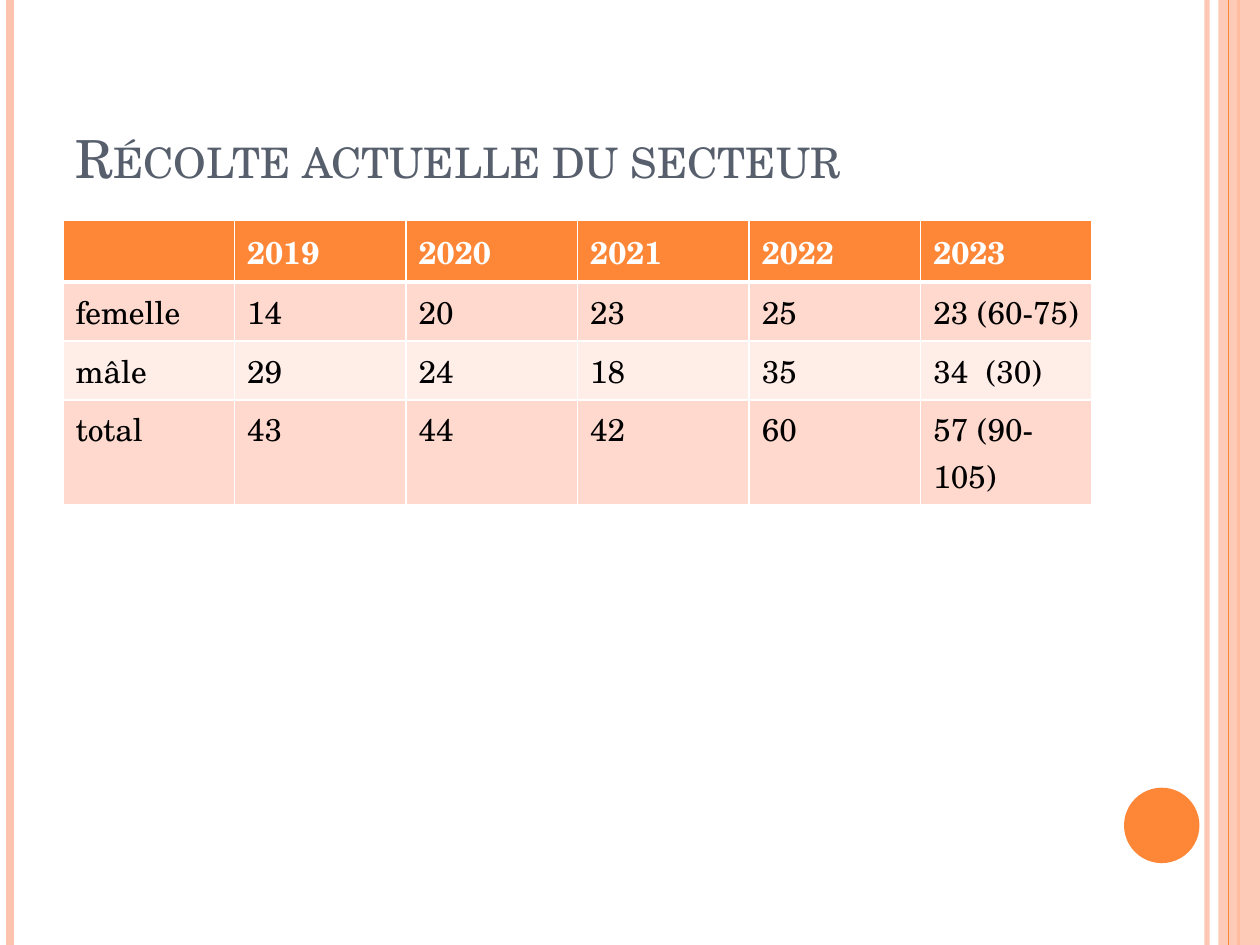
"""Build the slide on the sector's current harvest by sex and year."""
from lxml import etree
from pptx import Presentation
from pptx import util as u
from pptx.dml.color import RGBColor
from pptx.enum import shapes, text
from pptx.oxml.ns import qn

ORANGE = RGBColor(0xFE, 0x86, 0x37)
PEACH = RGBColor(0xFE, 0xC3, 0xAE)
BAND_DARK = RGBColor(0xFF, 0xD9, 0xCE)
BAND_LIGHT = RGBColor(0xFF, 0xED, 0xE8)
SLATE = RGBColor(0x57, 0x5F, 0x6D)
WHITE = RGBColor(0xFF, 0xFF, 0xFF)
BLACK = RGBColor(0, 0, 0)

WIDTH, HEIGHT = 25.4, 19.05
HARVEST = [
    ["", "2019", "2020", "2021", "2022", "2023"],
    ["femelle", "14", "20", "23", "25", "23 (60-75)"],
    ["mâle", "29", "24", "18", "35", "34  (30)"],
    ["total", "43", "44", "42", "60", "57 (90-105)"],
]


def write(frame, words, *, size, color, bold=False, small_caps=False):
    """Put formatted, left-aligned words into a text frame."""
    paragraph = frame.paragraphs[0]
    paragraph.alignment = text.PP_ALIGN.LEFT
    paragraph.font.size = u.Pt(size)
    if not words:
        return
    run = paragraph.add_run()
    run.text = words
    run.font.name = "TeX Gyre Schola"
    run.font.size = u.Pt(size)
    run.font.bold = bold
    run.font.color.rgb = color
    if small_caps:
        run.font._element.set("cap", "small")


def set_opacity(properties, percent):
    """Make the solid colour inside the given properties translucent."""
    color = properties.find(".//" + qn("a:srgbClr"))
    etree.SubElement(color, qn("a:alpha")).set("val", str(percent * 1000))


def set_border(cell, side, width):
    """Draw a white border on one side of a cell."""
    line = etree.SubElement(cell._tc.get_or_add_tcPr(), qn("a:ln" + side))
    line.set("w", str(u.Pt(width)))
    fill = etree.SubElement(line, qn("a:solidFill"))
    etree.SubElement(fill, qn("a:srgbClr")).set("val", str(WHITE))


class Page:
    """Hold the slide and its style, and add each kind of element."""

    def __init__(self, slide):
        self.slide = slide
        self.title_size = 30
        self.body_size = 18

    def title(self, words, left, top, width, height):
        """Move and fill the title placeholder."""
        title = self.slide.shapes.title
        title.left, title.top = u.Cm(left), u.Cm(top)
        title.width, title.height = u.Cm(width), u.Cm(height)
        frame = title.text_frame
        frame.auto_size = text.MSO_AUTO_SIZE.NONE
        frame.vertical_anchor = text.MSO_ANCHOR.BOTTOM
        write(frame, words, size=self.title_size, color=SLATE, small_caps=True)

    def stripe(self, x, color, weight, opacity=100):
        """Draw a vertical line over the full slide height."""
        stripe = self.slide.shapes.add_connector(
            shapes.MSO_CONNECTOR.STRAIGHT, u.Cm(x), 0, u.Cm(x), u.Cm(HEIGHT))
        stripe.line.color.rgb = color
        stripe.line.width = u.Pt(weight)
        properties = stripe._element.spPr
        if opacity < 100:
            set_opacity(properties, opacity)
        etree.SubElement(properties, qn("a:effectLst"))

    def shape(self, kind, left, top, width, height, color, opacity=100):
        """Add a filled shape without outline."""
        shape = self.slide.shapes.add_shape(
            kind, u.Cm(left), u.Cm(top), u.Cm(width), u.Cm(height))
        shape.shadow.inherit = False
        shape.fill.solid()
        shape.fill.fore_color.rgb = color
        shape.line.fill.background()
        if opacity < 100:
            set_opacity(shape._element.spPr, opacity)

    def table(self, rows, left, top, width, row_height):
        """Add a table with a header row and banded body rows."""
        table = self.slide.shapes.add_table(
            len(rows), len(rows[0]), u.Cm(left), u.Cm(top),
            u.Cm(width), u.Cm(row_height * len(rows))).table
        table.horz_banding = False
        for column in table.columns:
            column.width = u.Cm(width / len(rows[0]))
        for i, values in enumerate(rows):
            table.rows[i].height = u.Cm(row_height)
            header = i == 0
            band = ORANGE if header else BAND_DARK if i % 2 else BAND_LIGHT
            for j, value in enumerate(values):
                cell = table.cell(i, j)
                for side in "LRTB":
                    thick = (header and side == "B") or (i == 1 and side == "T")
                    set_border(cell, side, 3 if thick else 1)
                cell.fill.solid()
                cell.fill.fore_color.rgb = band
                write(cell.text_frame, value, size=self.body_size,
                      color=WHITE if header else BLACK, bold=header)


def main():
    """Build and save the slide."""
    deck = Presentation()
    deck.slide_width, deck.slide_height = u.Cm(WIDTH), u.Cm(HEIGHT)
    page = Page(deck.slides.add_slide(deck.slide_layouts[5]))

    page.stripe(24.33, PEACH, 3, opacity=93)
    page.stripe(0.2, PEACH, 4.5)
    page.stripe(24.97, ORANGE, 1.5)
    page.shape(shapes.MSO_SHAPE.RECTANGLE, 24.56, 0, 0.84, HEIGHT, PEACH, opacity=87)
    page.stripe(24.77, ORANGE, 0.75)
    page.shape(shapes.MSO_SHAPE.OVAL, 22.66, 15.88, 1.52, 1.52, ORANGE)

    page.title("Récolte actuelle du secteur", 1.27, 0.76, 20.75, 3.18)
    page.table(HARVEST, 1.27, 4.45, 20.75, 1.04)
    deck.save("out.pptx")


if __name__ == "__main__":
    main()
